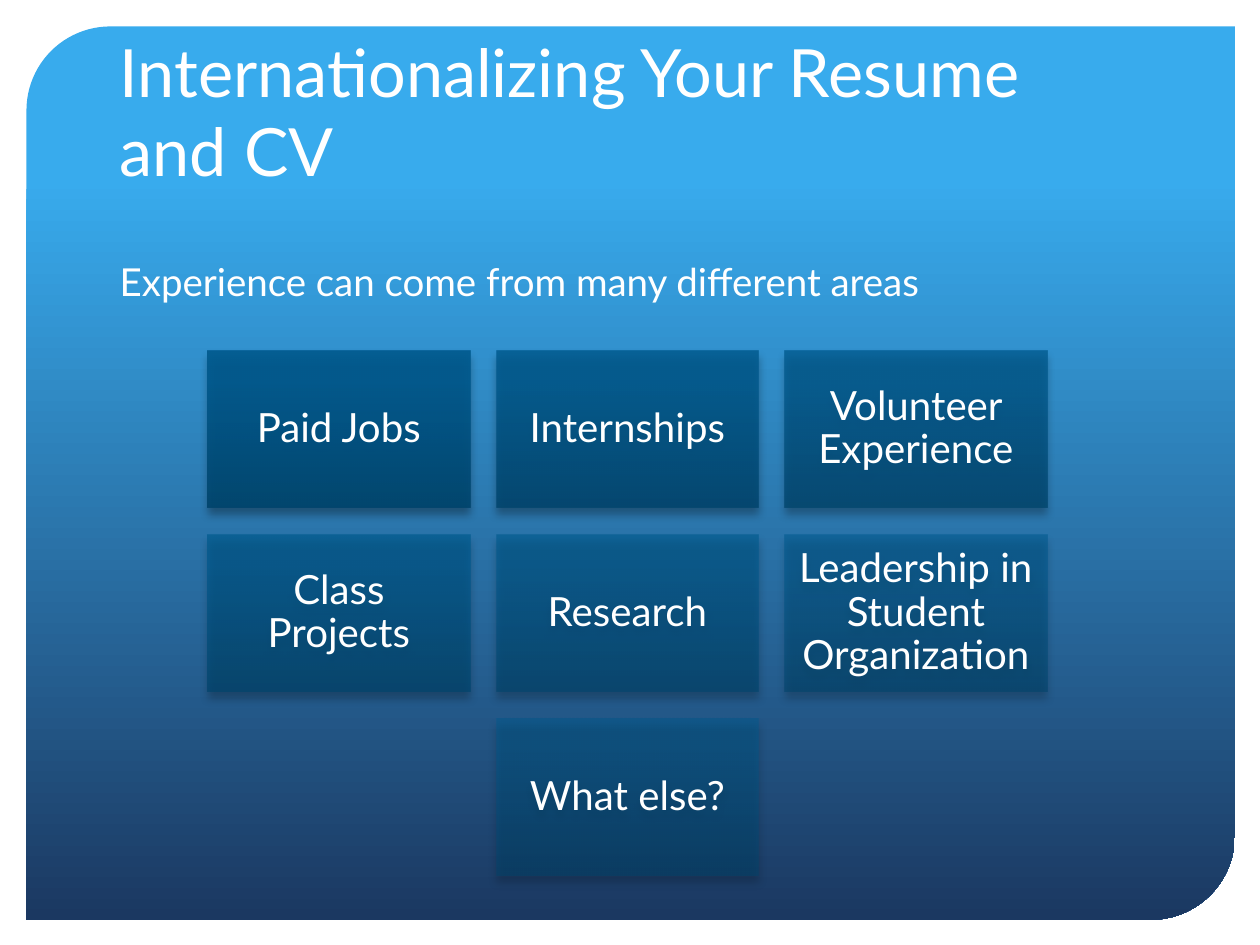
from lxml import etree
from pptx import Presentation
from pptx.dml.color import RGBColor
from pptx.enum.shapes import MSO_SHAPE
from pptx.enum.text import MSO_ANCHOR, MSO_AUTO_SIZE, PP_ALIGN
from pptx.oxml import parse_xml
from pptx.oxml.ns import nsdecls, qn
from pptx.util import Inches, Pt

PANEL = MSO_SHAPE.ROUND_2_DIAG_RECTANGLE
BOX = MSO_SHAPE.RECTANGLE
LEFT, CENTER = PP_ALIGN.LEFT, PP_ALIGN.CENTER
TOP, MIDDLE, BOTTOM = MSO_ANCHOR.TOP, MSO_ANCHOR.MIDDLE, MSO_ANCHOR.BOTTOM

# Content
TITLE = "Internationalizing Your Resume and CV"
INTRO = "Experience can come from many different areas"
EXPERIENCE_ROWS = [
    ["Paid Jobs", "Internships", "Volunteer Experience"],
    ["Class Projects", "Research", "Leadership in Student Organization"],
    ["What else?"],
]

# Look
FONT, WHITE = "Lato", "FFFFFF"
PANEL_STOPS = [(17, "38ABED"), (100, "1B3861")]
BOX_STOPS = [(0, "00456D"), (80, "00598D"), (100, "005A8E")]
FIRST_OPACITY, LAST_OPACITY = 90, 50

# Grid of boxes, in inches
GRID_CENTER, GRID_TOP = 4.98, 2.78
BOX_WIDTH, BOX_HEIGHT, GAP = 2.08, 1.25, 0.21


def color(hex_value):
    return RGBColor.from_string(hex_value)


def place(shape, left, top, width, height):
    bounds = {"left": left, "top": top, "width": width, "height": height}
    for name, value in bounds.items():
        setattr(shape, name, Inches(value))


def write(shape, text, size, align, anchor, line_spacing=1.0):
    frame = shape.text_frame
    frame.text = text
    frame_format = {"word_wrap": True, "auto_size": MSO_AUTO_SIZE.NONE,
                    "vertical_anchor": anchor}
    for name, value in frame_format.items():
        setattr(frame, name, value)
    paragraph = frame.paragraphs[0]
    paragraph_format = {"alignment": align, "line_spacing": line_spacing,
                        "space_before": Pt(0)}
    for name, value in paragraph_format.items():
        setattr(paragraph, name, value)
    font = paragraph.runs[0].font
    font.name, font.size = FONT, Pt(size)
    font.color.rgb = color(WHITE)
    return paragraph


def fill_gradient(shape, stops, angle, opacity=100):
    stop_xml = "".join(
        f'<a:gs pos="{position * 1000}"><a:srgbClr val="{hex_value}">'
        f'<a:alpha val="{round(opacity * 1000)}"/></a:srgbClr></a:gs>'
        for position, hex_value in stops)
    gradient = parse_xml(
        f'<a:gradFill {nsdecls("a")} rotWithShape="1"><a:gsLst>{stop_xml}</a:gsLst>'
        f'<a:lin ang="{angle * 60000}" scaled="0"/></a:gradFill>')
    shape.fill.background()
    properties = shape._element.spPr
    properties.replace(properties.find(qn("a:noFill")), gradient)


def add_gradient_shape(slide, kind, bounds, stops, angle, opacity=100):
    shape = slide.shapes.add_shape(kind, *(Inches(value) for value in bounds))
    shape.shadow.inherit = False
    shape.line.fill.background()
    fill_gradient(shape, stops, angle, opacity)
    return shape


def add_shadow(shape):
    effects = shape._element.spPr.find(qn("a:effectLst"))
    effects.append(parse_xml(
        f'<a:outerShdw {nsdecls("a")} blurRad="{Pt(5)}" dist="{Pt(4)}" '
        'dir="5400000" rotWithShape="0"><a:srgbClr val="000000">'
        '<a:alpha val="35000"/></a:srgbClr></a:outerShdw>'))


def remove_bullet(paragraph):
    properties = paragraph._p.get_or_add_pPr()
    properties.set("marL", "0")
    properties.set("indent", "0")
    etree.SubElement(properties, qn("a:buNone"))


def add_boxes(slide):
    last_index = sum(len(row) for row in EXPERIENCE_ROWS) - 1
    index = 0
    for row_number, row in enumerate(EXPERIENCE_ROWS):
        top = GRID_TOP + row_number * (BOX_HEIGHT + GAP)
        row_width = len(row) * (BOX_WIDTH + GAP) - GAP
        for column, label in enumerate(row):
            left = GRID_CENTER - row_width / 2 + column * (BOX_WIDTH + GAP)
            fade = (FIRST_OPACITY - LAST_OPACITY) * index / last_index
            box = add_gradient_shape(slide, BOX, (left, top, BOX_WIDTH, BOX_HEIGHT),
                                     BOX_STOPS, 270, FIRST_OPACITY - fade)
            add_shadow(box)
            write(box, label, 23, CENTER, MIDDLE, 0.9)
            index += 1


def main():
    presentation = Presentation()
    presentation.slide_width, presentation.slide_height = Inches(10), Inches(7.5)
    slide = presentation.slides.add_slide(presentation.slide_layouts[1])

    # Rounded panel behind everything
    panel = add_gradient_shape(slide, PANEL, (0.21, 0.21, 9.59, 7.09), PANEL_STOPS, 90)
    panel.adjustments[0], panel.adjustments[1] = 0.094, 0
    slide.shapes._spTree.insert(2, panel._element)

    # Title and introduction
    title, body = slide.shapes.title, slide.placeholders[1]
    place(title, 0.85, 0.42, 8.29, 1.14)
    write(title, TITLE, 38, LEFT, BOTTOM)
    place(body, 0.85, 2, 8.29, 0.48)
    remove_bullet(write(body, INTRO, 22, LEFT, TOP))

    # Kinds of experience
    add_boxes(slide)
    presentation.save("out.pptx")


if __name__ == "__main__":
    main()
